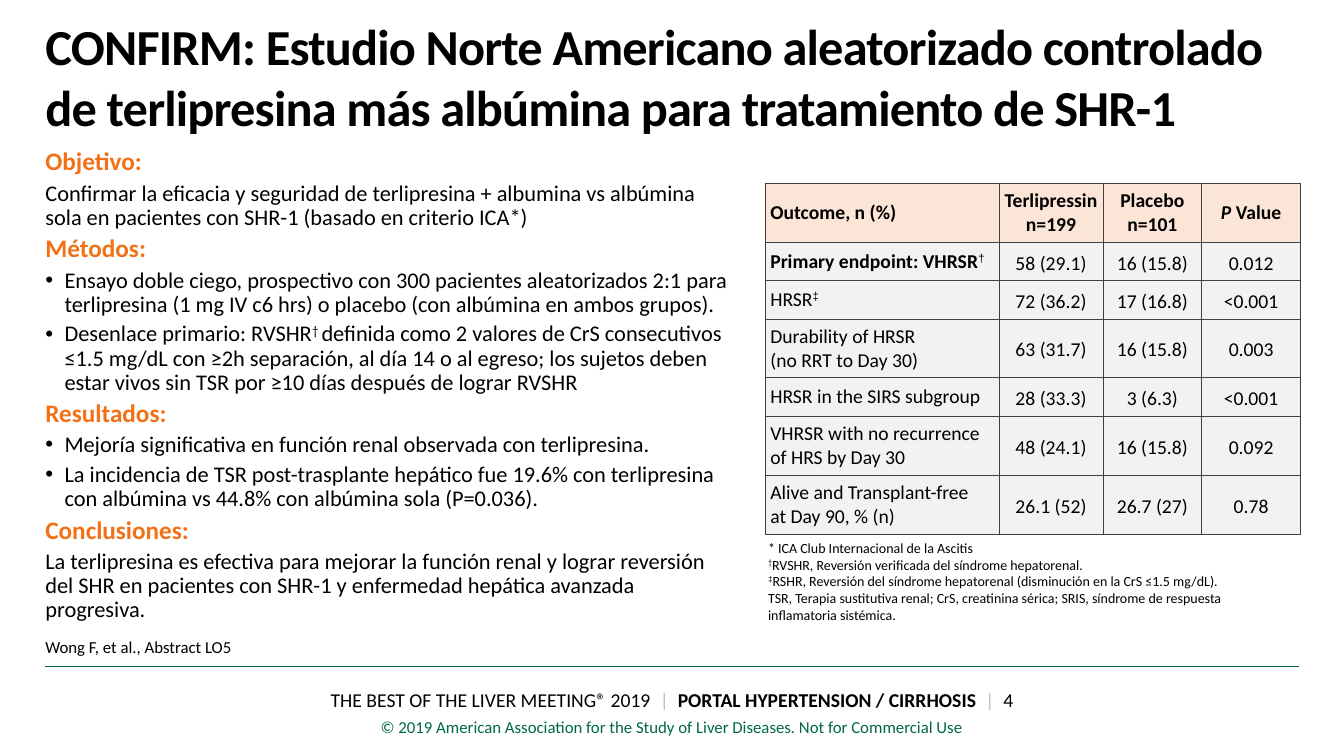
import pptx
import pptx.dml.color
import pptx.enum.shapes
import pptx.enum.text
import pptx.oxml.ns
import pptx.util
from lxml import etree

WIDTH, HEIGHT = pptx.util.Inches(13.33), pptx.util.Inches(7.5)
BLACK, ORANGE, GREEN, GREY = "000000", "F37116", "006847", "BFBFBF"
HEADER_FILL, BODY_FILL, BORDER = "FBE5D6", "F2F2F2", "404040"
LEFT, CENTER = pptx.enum.text.PP_ALIGN.LEFT, pptx.enum.text.PP_ALIGN.CENTER
TOP, MIDDLE = pptx.enum.text.MSO_ANCHOR.TOP, pptx.enum.text.MSO_ANCHOR.MIDDLE
MARGIN = 32.4
CELL_INSETS = (3.6, 3.6, 3.6, 3.6)

DAGGER = ("†", {"raised": True})
ARIAL_DAGGER = ("†", {"raised": True, "font": "Arial", "bold": False})
DOUBLE_DAGGER = ("‡", {"raised": True, "font": "Arial"})

SECTIONS = [
    ("Objetivo:", False, [
        ["Confirmar la eficacia y seguridad de terlipresina + albumina vs albúmina sola "
         "en pacientes con SHR-1 (basado en criterio ICA*)"]]),
    ("Métodos:", True, [
        ["Ensayo doble ciego, prospectivo con 300 pacientes aleatorizados 2:1 para "
         "terlipresina (1 mg IV c6 hrs) o placebo (con albúmina en ambos grupos)."],
        ["Desenlace primario: RVSHR", ("† ", {"raised": True}),
         "definida como 2 valores de CrS consecutivos ≤1.5 mg/dL con ≥2h separación, "
         "al día 14 o al egreso; los sujetos deben estar vivos sin TSR por ≥10 días "
         "después de lograr RVSHR"]]),
    ("Resultados:", True, [
        ["Mejoría significativa en función renal observada con terlipresina."],
        ["La incidencia de TSR post-trasplante hepático fue 19.6% con terlipresina "
         "con albúmina vs 44.8% con albúmina sola (P=0.036)."]]),
    ("Conclusiones:", False, [
        ["La terlipresina es efectiva para mejorar la función renal y lograr reversión "
         "del SHR en pacientes con SHR-1 y enfermedad hepática avanzada progresiva."]]),
]

HEADERS = [
    [["Outcome, n (%)"]],
    [["Terlipressin"], ["n=199"]],
    [["Placebo"], ["n=101"]],
    [[("P", {"italic": True}), " Value"]],
]
OUTCOMES = [
    ([("Primary endpoint: VHRSR", {"bold": True}), ARIAL_DAGGER],
     "58 (29.1)", "16 (15.8)", "0.012"),
    (["HRSR", DOUBLE_DAGGER], "72 (36.2)", "17 (16.8)", "<0.001"),
    (["Durability of HRSR\n(no RRT to Day 30)"], "63 (31.7)", "16 (15.8)", "0.003"),
    (["HRSR in the SIRS subgroup"], "28 (33.3)", "3 (6.3)", "<0.001"),
    (["VHRSR with no recurrence\nof HRS by Day 30"], "48 (24.1)", "16 (15.8)", "0.092"),
    (["Alive and Transplant-free\nat Day 90, % (n)"], "26.1 (52)", "26.7 (27)", "0.78"),
]
COLUMN_SHARES = [17.4, 7.73, 7.35, 7.35]
TALL, SHORT = 7.8, 5.07
ROW_SHARES = [TALL, SHORT, SHORT, TALL, SHORT, TALL, TALL]

NOTES = [
    ["* ICA Club Internacional de la Ascitis"],
    [DAGGER, "RVSHR, Reversión verificada del síndrome hepatorenal.\n", DOUBLE_DAGGER,
     "RSHR, Reversión del síndrome hepatorenal (disminución en la CrS ≤1.5 mg/dL)."],
    ["TSR, Terapia sustitutiva renal; CrS, creatinina sérica; SRIS, síndrome de "
     "respuesta inflamatoria sistémica."],
]
DIVIDER = ("|  ", {"color": GREY})
FOOTER = ["THE BEST OF THE LIVER MEETING® 2019  ", DIVIDER,
          ("PORTAL HYPERTENSION / CIRRHOSIS  ", {"bold": True}), DIVIDER, "4"]


def across(share):
    """Turn a percentage of the slide width into a length."""
    return round(WIDTH * share / 100)


def down(share):
    """Turn a percentage of the slide height into a length."""
    return round(HEIGHT * share / 100)


def paint(color_format, color):
    """Give a colour format a hex colour."""
    color_format.rgb = pptx.dml.color.RGBColor.from_string(color)


def add_span(para, text, size, color=BLACK, bold=False, italic=False,
             raised=False, font="Calibri"):
    """Add runs in one style, with a line break at each newline."""
    for index, line in enumerate(text.split("\n")):
        if index:
            para.add_line_break()
        if not line:
            continue
        span = para.add_run()
        span.text = line
        span.font.name, span.font.size = font, pptx.util.Pt(size)
        span.font.bold, span.font.italic = bold, italic
        paint(span.font.color, color)
        if raised:
            span.font._element.set("baseline", "30000")


def write(para, spans, size, align=LEFT, spacing=1.0, **style):
    """Fill a paragraph with plain or individually styled spans."""
    para.alignment, para.line_spacing = align, spacing
    for span in spans:
        text, changes = (span, {}) if isinstance(span, str) else span
        add_span(para, text, size, **{**style, **changes})


def next_para(frame):
    """Return the empty first paragraph of a frame or a new one."""
    first = frame.paragraphs[0]
    return frame.add_paragraph() if first.runs else first


def set_bullet(para):
    """Give a paragraph a hanging round bullet."""
    props = para._p.get_or_add_pPr()
    indent = pptx.util.Inches(0.19)
    props.set("marL", str(indent))
    props.set("indent", str(-indent))
    etree.SubElement(props, pptx.oxml.ns.qn("a:buFont")).set("typeface", "Arial")
    etree.SubElement(props, pptx.oxml.ns.qn("a:buChar")).set("char", "•")


def set_frame(frame, insets, anchor=TOP):
    """Set wrapping, anchor and the four insets in points."""
    frame.word_wrap, frame.auto_size = True, pptx.enum.text.MSO_AUTO_SIZE.NONE
    frame.vertical_anchor = anchor
    (frame.margin_left, frame.margin_top,
     frame.margin_right, frame.margin_bottom) = map(pptx.util.Pt, insets)


def add_box(page, left, top, width, height, insets=(7.2, 3.6, 7.2, 3.6)):
    """Add a text box placed by shares of the slide and return its frame."""
    box = page.shapes.add_textbox(across(left), down(top), across(width), down(height))
    set_frame(box.text_frame, insets)
    return box.text_frame


def add_title(page, text):
    """Place and format the title placeholder."""
    title = page.shapes.title
    title.left, title.top = 0, down(0.4)
    title.width, title.height = WIDTH, down(19.2)
    set_frame(title.text_frame, (MARGIN, 0, MARGIN, 0), MIDDLE)
    para = title.text_frame.paragraphs[0]
    write(para, [text], 36, bold=True)
    para.runs[0].font._element.set("spc", "-60")


def add_summary(page):
    """Add the study summary with its orange headings."""
    frame = add_box(page, 0, 19.07, 56.26, 66, (MARGIN, 3.6, 14.4, 3.6))
    for heading, bulleted, texts in SECTIONS:
        write(next_para(frame), [heading], 18, spacing=0.9, color=ORANGE, bold=True)
        for spans in texts:
            para = next_para(frame)
            if bulleted:
                set_bullet(para)
            write(para, spans, 16, spacing=0.9)
    for para in frame.paragraphs[1:]:
        para.space_before = pptx.util.Pt(4)


def style_cell(cell, fill):
    """Give a table cell its borders, fill, insets and anchor."""
    props = cell._tc.get_or_add_tcPr()
    for side in ("lnL", "lnR", "lnT", "lnB"):
        line = etree.SubElement(props, pptx.oxml.ns.qn("a:" + side), w="9525")
        solid = etree.SubElement(line, pptx.oxml.ns.qn("a:solidFill"))
        etree.SubElement(solid, pptx.oxml.ns.qn("a:srgbClr"), val=BORDER)
    cell.fill.solid()
    paint(cell.fill.fore_color, fill)
    cell.vertical_anchor = MIDDLE
    (cell.margin_left, cell.margin_top,
     cell.margin_right, cell.margin_bottom) = map(pptx.util.Pt, CELL_INSETS)


def add_outcomes(page):
    """Add the table of outcomes."""
    rows = [HEADERS] + [[[label]] + [[[value]] for value in values]
                        for label, *values in OUTCOMES]
    table = page.shapes.add_table(
        len(rows), len(HEADERS), across(56.94), down(24.27),
        across(sum(COLUMN_SHARES)), down(sum(ROW_SHARES))).table
    for column, share in zip(table.columns, COLUMN_SHARES):
        column.width = across(share)
    for row, share in zip(table.rows, ROW_SHARES):
        row.height = down(share)
    for r, row in enumerate(rows):
        for c, paras in enumerate(row):
            cell = table.cell(r, c)
            style_cell(cell, BODY_FILL if r else HEADER_FILL)
            for spans in paras:
                write(next_para(cell.text_frame), spans, 14, CENTER if c else LEFT,
                      1.15 if r and c else 1.0, bold=not r)


def add_rule(page):
    """Add the line above the footer."""
    rule = page.shapes.add_connector(
        pptx.enum.shapes.MSO_CONNECTOR.STRAIGHT,
        across(3.38), down(88.13), across(96.62), down(88.13))
    paint(rule.line.color, GREEN)
    rule.line.width = pptx.util.Pt(1)
    etree.SubElement(rule._element.spPr, pptx.oxml.ns.qn("a:effectLst"))


def main():
    """Build the slide and save it."""
    deck = pptx.Presentation()
    deck.slide_width, deck.slide_height = WIDTH, HEIGHT
    page = deck.slides.add_slide(deck.slide_layouts[5])
    add_title(page, "CONFIRM: Estudio Norte Americano aleatorizado controlado de "
                    "terlipresina más albúmina para tratamiento de SHR-1")
    write(add_box(page, 0, 90.4, 100, 4.53).paragraphs[0], FOOTER, 14, CENTER)
    add_rule(page)
    write(add_box(page, 0, 94.13, 100, 4).paragraphs[0],
          ["© 2019 American Association for the Study of Liver Diseases. "
           "Not for Commercial Use"], 12, CENTER, color=GREEN)
    citation = add_box(page, 0, 80.67, 21.68, 7.47, (MARGIN, 20.9, 0, 0))
    write(citation.paragraphs[0], ["Wong F, et al., Abstract LO5"], 12, spacing=0.9)
    add_outcomes(page)
    add_summary(page)
    notes = add_box(page, 56.41, 70.67, 40.36, 12.53)
    for spans in NOTES:
        write(next_para(notes), spans, 10)
    deck.save("out.pptx")


if __name__ == "__main__":
    main()
